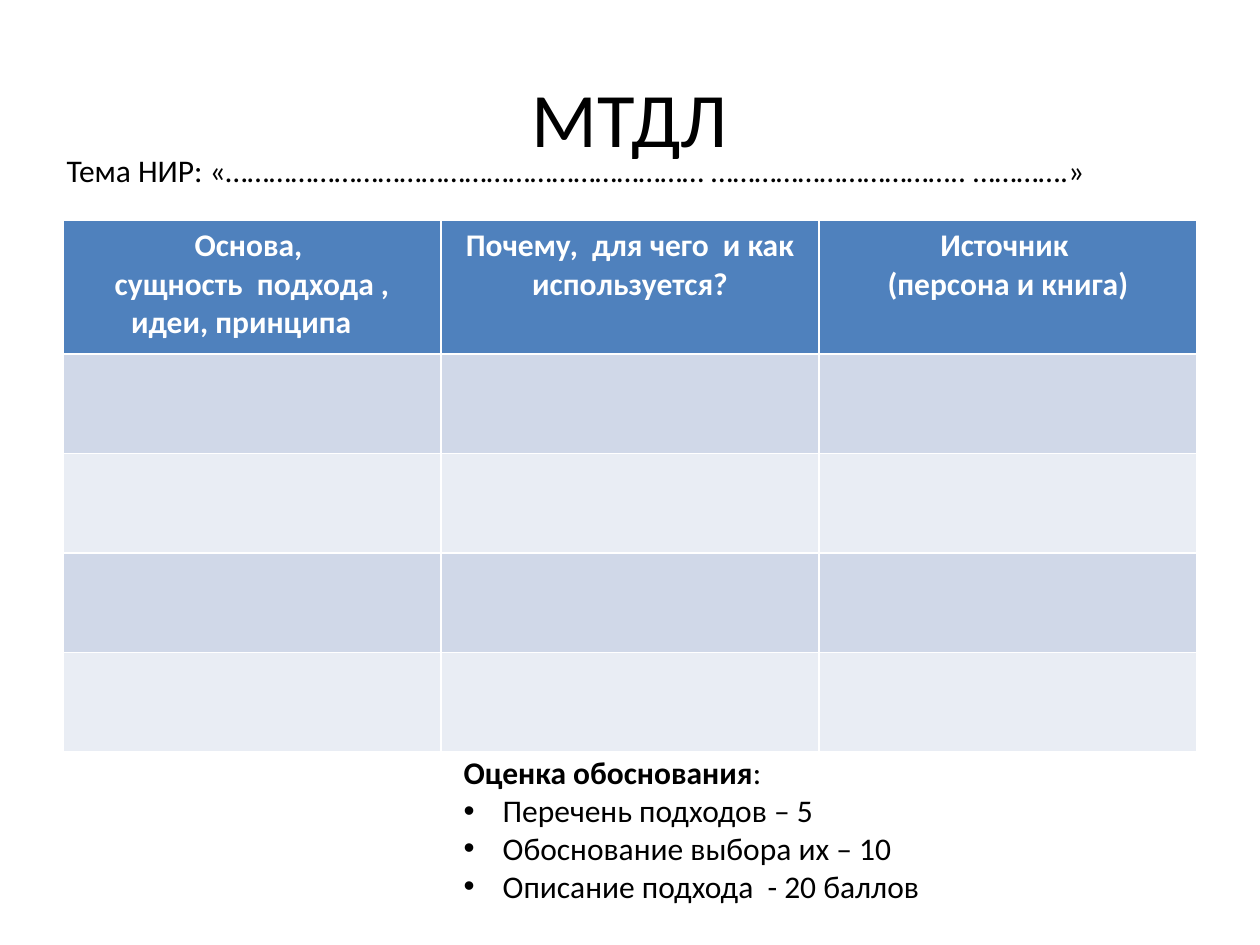
from dataclasses import dataclass

from lxml import etree
from pptx import Presentation
from pptx import util as u
from pptx.dml.color import RGBColor
from pptx.enum import text
from pptx.oxml import ns


@dataclass(frozen=True)
class Theme:
    font: str = "Calibri"
    title_size: int = 44
    text_size: int = 18
    ink: str = "000000"
    header_ink: str = "FFFFFF"
    header_fill: str = "4F81BD"
    bands: tuple = ("D0D8E8", "E9EDF4")


theme = Theme()


def add_run(paragraph, wording, size=theme.text_size, color=theme.ink, bold=False):
    run = paragraph.add_run()
    run.text = wording
    run.font.name = theme.font
    run.font.size = u.Pt(size)
    run.font.bold = bold
    run.font.color.rgb = RGBColor.from_string(color)


def place(shape, left, top, width, height):
    shape.left, shape.top = u.Inches(left), u.Inches(top)
    shape.width, shape.height = u.Inches(width), u.Inches(height)


presentation = Presentation()
presentation.slide_width = u.Inches(10)
presentation.slide_height = u.Inches(7.5)
slide = presentation.slides.add_slide(presentation.slide_layouts[1])

# Title
title = slide.shapes.title
place(title, 0.5, 0.3, 9, 1.25)
title.text_frame.vertical_anchor = text.MSO_ANCHOR.MIDDLE
paragraph = title.text_frame.paragraphs[0]
paragraph.alignment = text.PP_ALIGN.CENTER
add_run(paragraph, "МТДЛ", theme.title_size)

# Table of approaches
headers = [
    ["Основа, ", "сущность  подхода , идеи, принципа   "],
    ["Почему,  для чего  и как используется?"],
    ["Источник ", "(персона и книга)"],
]
row_heights = [1.06] + [0.79] * 4
table = slide.shapes.add_table(
    len(row_heights), len(headers),
    u.Inches(0.5), u.Inches(1.75), u.Inches(9), u.Inches(sum(row_heights)),
).table
for column in table.columns:
    column.width = u.Inches(3)
for row_index, height in enumerate(row_heights):
    row = table.rows[row_index]
    row.height = u.Inches(height)
    fill = theme.bands[(row_index - 1) % 2] if row_index else theme.header_fill
    for cell in row.cells:
        cell.fill.solid()
        cell.fill.fore_color.rgb = RGBColor.from_string(fill)
for column_index, lines in enumerate(headers):
    frame = table.cell(0, column_index).text_frame
    for line_index, line in enumerate(lines):
        paragraph = frame.add_paragraph() if line_index else frame.paragraphs[0]
        paragraph.alignment = text.PP_ALIGN.CENTER
        add_run(paragraph, line, color=theme.header_ink, bold=True)

# Scoring list
scoring = slide.placeholders[1]
place(scoring, 3.58, 5.93, 4.02, 1.31)
frame = scoring.text_frame
frame.auto_size = text.MSO_AUTO_SIZE.SHAPE_TO_FIT_TEXT
paragraph = frame.paragraphs[0]
add_run(paragraph, "Оценка обоснования", bold=True)
add_run(paragraph, ":")
for item in ["Перечень подходов – 5", "Обоснование выбора их – 10",
             "Описание подхода  - 20 баллов"]:
    add_run(frame.add_paragraph(), item)
for index, paragraph in enumerate(frame.paragraphs):
    paragraph.space_before = u.Pt(0)
    indent = u.Inches(0.31) if index else 0
    properties = paragraph._p.get_or_add_pPr()
    properties.set("marL", str(indent))
    properties.set("indent", str(-indent))
    if index:
        etree.SubElement(properties, ns.qn("a:buFont")).set("typeface", "Arial")
        etree.SubElement(properties, ns.qn("a:buChar")).set("char", "•")
    else:
        etree.SubElement(properties, ns.qn("a:buNone"))

# Research topic
topic = slide.shapes.add_textbox(
    u.Inches(0.43), u.Inches(1.15), u.Inches(9.29), u.Inches(0.4))
topic.text_frame.word_wrap = True
topic.text_frame.auto_size = text.MSO_AUTO_SIZE.SHAPE_TO_FIT_TEXT
add_run(topic.text_frame.paragraphs[0],
        "Тема НИР: «………………………………………………………… …………………………….. ………….»")

presentation.save("out.pptx")
